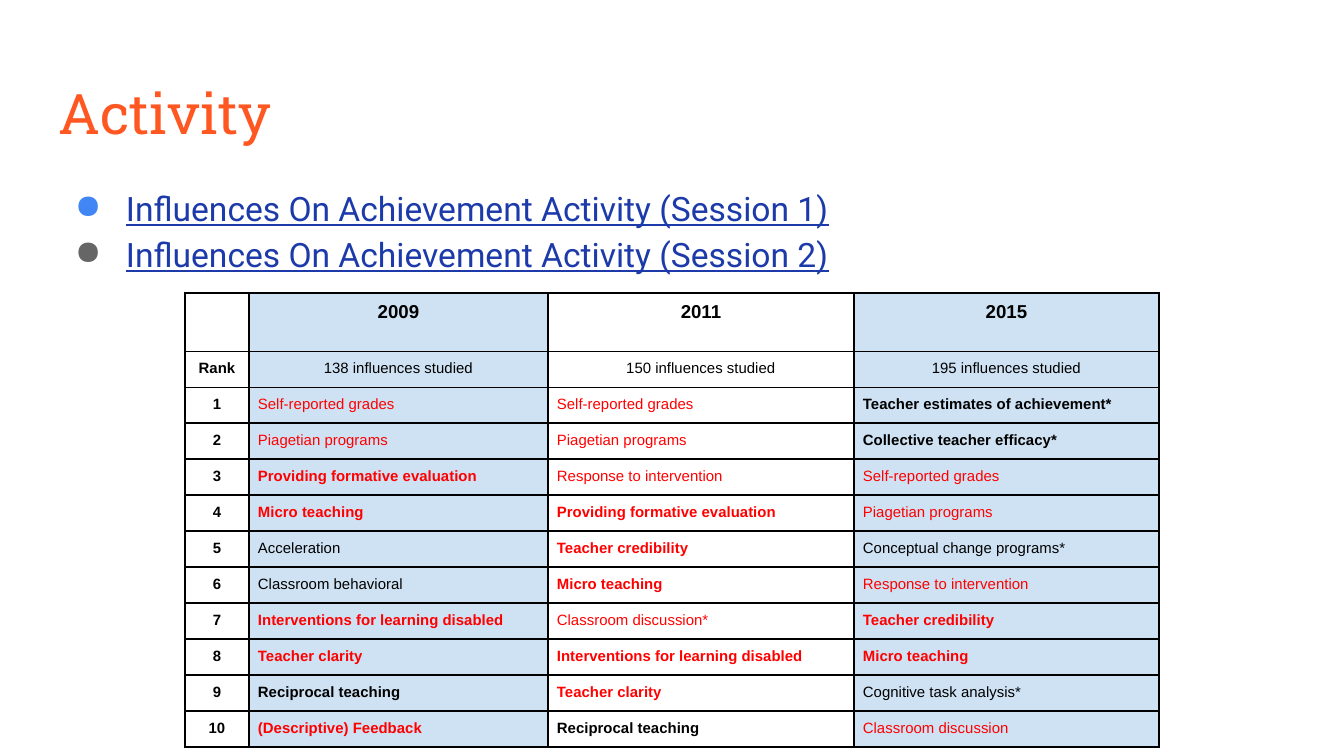
from lxml.etree import SubElement
from pptx import Presentation
from pptx.dml.color import RGBColor
from pptx.enum.text import MSO_ANCHOR, PP_ALIGN
from pptx.oxml.ns import qn
from pptx.util import Pt

BLACK = RGBColor(0x00, 0x00, 0x00)
RED = RGBColor(0xFF, 0x00, 0x00)
ORANGE = RGBColor(0xFF, 0x57, 0x22)
LINK_BLUE = RGBColor(0x1C, 0x3A, 0xA9)
BULLET_BLUE = RGBColor(0x42, 0x85, 0xF4)
BULLET_GREY = RGBColor(0x66, 0x66, 0x66)
PALE_BLUE = RGBColor(0xCF, 0xE2, 0xF3)

PLAIN = (BLACK, False)
BOLD = (BLACK, True)
RED_PLAIN = (RED, False)
RED_BOLD = (RED, True)

TITLE = "Activity"
ACTIVITIES = [
    ("Influences On Achievement Activity (Session 1)", BULLET_BLUE),
    ("Influences On Achievement Activity (Session 2)", BULLET_GREY),
]
YEARS = ["", "2009", "2011", "2015"]
STUDIED = ["138 influences studied", "150 influences studied", "195 influences studied"]
RANKING = [
    [("Self-reported grades", RED_PLAIN), ("Self-reported grades", RED_PLAIN),
     ("Teacher estimates of achievement*", BOLD)],
    [("Piagetian programs", RED_PLAIN), ("Piagetian programs", RED_PLAIN),
     ("Collective teacher efficacy*", BOLD)],
    [("Providing formative evaluation", RED_BOLD), ("Response to intervention", RED_PLAIN),
     ("Self-reported grades", RED_PLAIN)],
    [("Micro teaching", RED_BOLD), ("Providing formative evaluation", RED_BOLD),
     ("Piagetian programs", RED_PLAIN)],
    [("Acceleration", PLAIN), ("Teacher credibility", RED_BOLD),
     ("Conceptual change programs*", PLAIN)],
    [("Classroom behavioral", PLAIN), ("Micro teaching", RED_BOLD),
     ("Response to intervention", RED_PLAIN)],
    [("Interventions for learning disabled", RED_BOLD), ("Classroom discussion*", RED_PLAIN),
     ("Teacher credibility", RED_BOLD)],
    [("Teacher clarity", RED_BOLD), ("Interventions for learning disabled", RED_BOLD),
     ("Micro teaching", RED_BOLD)],
    [("Reciprocal teaching", BOLD), ("Teacher clarity", RED_BOLD),
     ("Cognitive task analysis*", PLAIN)],
    [("(Descriptive) Feedback", RED_BOLD), ("Reciprocal teaching", BOLD),
     ("Classroom discussion", RED_PLAIN)],
]

SLIDE_SIZE = (1344, 756)
TITLE_BOX = (46, 66, 1253, 85)
ACTIVITY_BOX = (46, 169, 1253, 503)
TABLE_LEFT, TABLE_TOP = 185, 293
COLUMN_WIDTHS = [64, 299, 306, 305]
YEAR_ROW_HEIGHT = 56
LOWER_ROWS_HEIGHT = 391
BOX_INSET, CELL_INSET = 13, 9
BULLET_MARGIN, BULLET_HANG = 67, 51


def px(length):
    return round(length * 914400 / 134.4)


def add_run(paragraph, text, font, size, color, bold=False, underline=False):
    run = paragraph.add_run()
    run.text = text
    run.font.name = font
    run.font.size = Pt(size)
    run.font.color.rgb = color
    run.font.bold = bold
    run.font.underline = underline


def set_insets(area, inset):
    area.margin_left = area.margin_right = px(inset)
    area.margin_top = area.margin_bottom = px(inset)


def add_text_frame(slide, box):
    frame = slide.shapes.add_textbox(*map(px, box)).text_frame
    frame.word_wrap = True
    frame.vertical_anchor = MSO_ANCHOR.TOP
    set_insets(frame, BOX_INSET)
    return frame


def add_bullet(paragraph, color):
    properties = paragraph._p.get_or_add_pPr()
    properties.set("marL", str(px(BULLET_MARGIN)))
    properties.set("indent", str(-px(BULLET_HANG)))
    bullet_color = SubElement(properties, qn("a:buClr"))
    SubElement(bullet_color, qn("a:srgbClr"), val=str(color))
    SubElement(properties, qn("a:buChar"), char="●")


def add_borders(cell):
    properties = cell._tc.get_or_add_tcPr()
    for position, side in enumerate(("a:lnL", "a:lnR", "a:lnT", "a:lnB")):
        line = properties.makeelement(qn(side), {"w": str(Pt(1))})
        properties.insert(position, line)
        fill = SubElement(line, qn("a:solidFill"))
        SubElement(fill, qn("a:srgbClr"), val=str(BLACK))


def add_ranking_table(slide):
    rows = [[(year, BOLD) for year in YEARS],
            [("Rank", BOLD)] + [(count, PLAIN) for count in STUDIED]]
    rows += [[(str(rank), BOLD)] + influences
             for rank, influences in enumerate(RANKING, 1)]
    lower_count = len(rows) - 1
    edges = [0] + [YEAR_ROW_HEIGHT + round(LOWER_ROWS_HEIGHT * i / lower_count)
                   for i in range(lower_count + 1)]
    table = slide.shapes.add_table(
        len(rows), len(COLUMN_WIDTHS), px(TABLE_LEFT), px(TABLE_TOP),
        px(sum(COLUMN_WIDTHS)), px(edges[-1])).table
    for column, width in zip(table.columns, COLUMN_WIDTHS):
        column.width = px(width)
    for r, row in enumerate(rows):
        table.rows[r].height = px(edges[r + 1] - edges[r])
        for c, (text, (color, bold)) in enumerate(row):
            cell = table.cell(r, c)
            set_insets(cell, CELL_INSET)
            cell.vertical_anchor = MSO_ANCHOR.TOP
            if c % 2:
                cell.fill.solid()
                cell.fill.fore_color.rgb = PALE_BLUE
            else:
                cell.fill.background()
            add_borders(cell)
            paragraph = cell.text_frame.paragraphs[0]
            centred = r < 2 or c == 0
            paragraph.alignment = PP_ALIGN.CENTER if centred else PP_ALIGN.LEFT
            add_run(paragraph, text, "Arial", 10 if r == 0 else 8, color, bold)


def main():
    presentation = Presentation()
    presentation.slide_width, presentation.slide_height = map(px, SLIDE_SIZE)
    slide = presentation.slides.add_slide(presentation.slide_layouts[6])

    title = add_text_frame(slide, TITLE_BOX).paragraphs[0]
    add_run(title, TITLE, "Roboto Slab", 30, ORANGE)

    activity_frame = add_text_frame(slide, ACTIVITY_BOX)
    for i, (activity, bullet_color) in enumerate(ACTIVITIES):
        paragraph = activity_frame.add_paragraph() if i else activity_frame.paragraphs[0]
        paragraph.line_spacing = 1.15
        add_bullet(paragraph, bullet_color)
        add_run(paragraph, activity, "Roboto", 18, LINK_BLUE, underline=True)

    add_ranking_table(slide)
    presentation.save("out.pptx")


if __name__ == "__main__":
    main()
